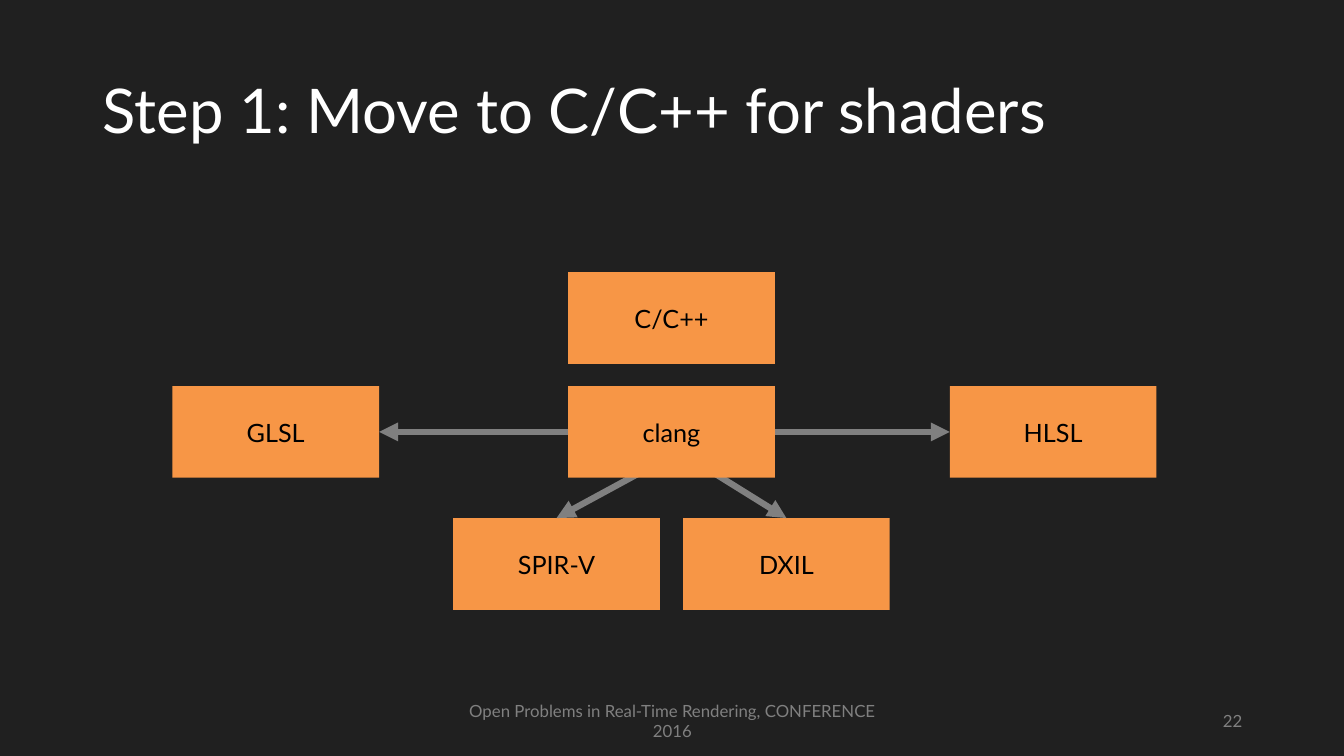
from lxml.etree import SubElement
from pptx import Presentation
from pptx.dml.color import RGBColor
from pptx.enum.shapes import MSO_CONNECTOR, MSO_SHAPE
from pptx.enum.text import MSO_ANCHOR, PP_ALIGN
from pptx.oxml.ns import qn
from pptx.util import Inches, Pt

BACKGROUND = RGBColor(0x20, 0x20, 0x20)
WHITE = RGBColor(0xFF, 0xFF, 0xFF)
BLACK = RGBColor(0x00, 0x00, 0x00)
GRAY = RGBColor(0x80, 0x80, 0x80)
ORANGE = RGBColor(0xF7, 0x96, 0x46)
FONT = "Lato"
BOX_WIDTH, BOX_HEIGHT = 2.05, 0.91
TOP, LEFT, RIGHT = 0, 1, 3


def write_text(shape, text, size, color, alignment):
    frame = shape.text_frame
    frame.word_wrap = True
    frame.vertical_anchor = MSO_ANCHOR.MIDDLE
    frame.text = text
    paragraph = frame.paragraphs[0]
    paragraph.alignment = alignment
    paragraph.font.name = FONT
    paragraph.font.size = Pt(size)
    paragraph.font.color.rgb = color
    return paragraph


def add_title(slide, left, top, width, height):
    title = slide.shapes.title
    title.left, title.top = Inches(left), Inches(top)
    title.width, title.height = Inches(width), Inches(height)
    paragraph = write_text(title, "Step 1: Move to C/C++ for shaders", 44, WHITE, PP_ALIGN.LEFT)
    paragraph.line_spacing = 0.9


def add_footer(slide, left, top, width, height):
    number_width = 3
    parts = [
        ("Open Problems in Real-Time Rendering, CONFERENCE 2016", left, 4.5, PP_ALIGN.CENTER),
        ("22", left + width - number_width, number_width, PP_ALIGN.RIGHT),
    ]
    for text, part_left, part_width, alignment in parts:
        box = slide.shapes.add_textbox(
            Inches(part_left), Inches(top), Inches(part_width), Inches(height))
        write_text(box, text, 12, GRAY, alignment)


def add_language_box(slide, text, left, top):
    box = slide.shapes.add_shape(
        MSO_SHAPE.RECTANGLE, Inches(left), Inches(top), Inches(BOX_WIDTH), Inches(BOX_HEIGHT))
    box.shadow.inherit = False
    box.fill.solid()
    box.fill.fore_color.rgb = ORANGE
    box.line.fill.background()
    write_text(box, text, 18, BLACK, PP_ALIGN.CENTER)
    return box


def add_arrow(slide, start_x, start_y, target, site):
    start_x, start_y = Inches(start_x), Inches(start_y)
    arrow = slide.shapes.add_connector(
        MSO_CONNECTOR.STRAIGHT, start_x, start_y, start_x, start_y)
    arrow.end_connect(target, site)
    arrow.line.color.rgb = GRAY
    arrow.line.width = Pt(4.5)
    SubElement(arrow.line._get_or_add_ln(), qn("a:tailEnd"), type="triangle")
    SubElement(arrow._element.spPr, qn("a:effectLst"))
    return arrow


def add_compiler_diagram(slide, left, top, width, height):
    center = left + 4.95
    middle_left = center - BOX_WIDTH / 2
    middle_top = top + 1.13
    bottom_top = top + height - BOX_HEIGHT
    branch_offset = 1.14

    add_language_box(slide, "C/C++", middle_left, top)
    spirv = add_language_box(slide, "SPIR-V", middle_left - branch_offset, bottom_top)
    dxil = add_language_box(slide, "DXIL", middle_left + branch_offset, bottom_top)
    for target, offset in [(spirv, -0.11), (dxil, 0.24)]:
        add_arrow(slide, center + offset, bottom_top - 0.56, target, TOP)

    clang = add_language_box(slide, "clang", middle_left, middle_top)
    hlsl = add_language_box(slide, "HLSL", left + width - BOX_WIDTH, middle_top)
    glsl = add_language_box(slide, "GLSL", left, middle_top)
    for target, start_site, end_site in [(glsl, LEFT, RIGHT), (hlsl, RIGHT, LEFT)]:
        arrow = add_arrow(slide, center, middle_top, target, end_site)
        arrow.begin_connect(clang, start_site)


def main():
    presentation = Presentation()
    presentation.slide_width = Inches(13.33)
    presentation.slide_height = Inches(7.5)
    slide = presentation.slides.add_slide(presentation.slide_layouts.get_by_name("Title Only"))
    slide.background.fill.solid()
    slide.background.fill.fore_color.rgb = BACKGROUND
    add_title(slide, 0.92, 0.4, 11.5, 1.45)
    add_footer(slide, 4.42, 6.95, 8, 0.4)
    add_compiler_diagram(slide, 1.71, 2.7, 9.76, 3.35)
    presentation.save("out.pptx")


if __name__ == "__main__":
    main()
